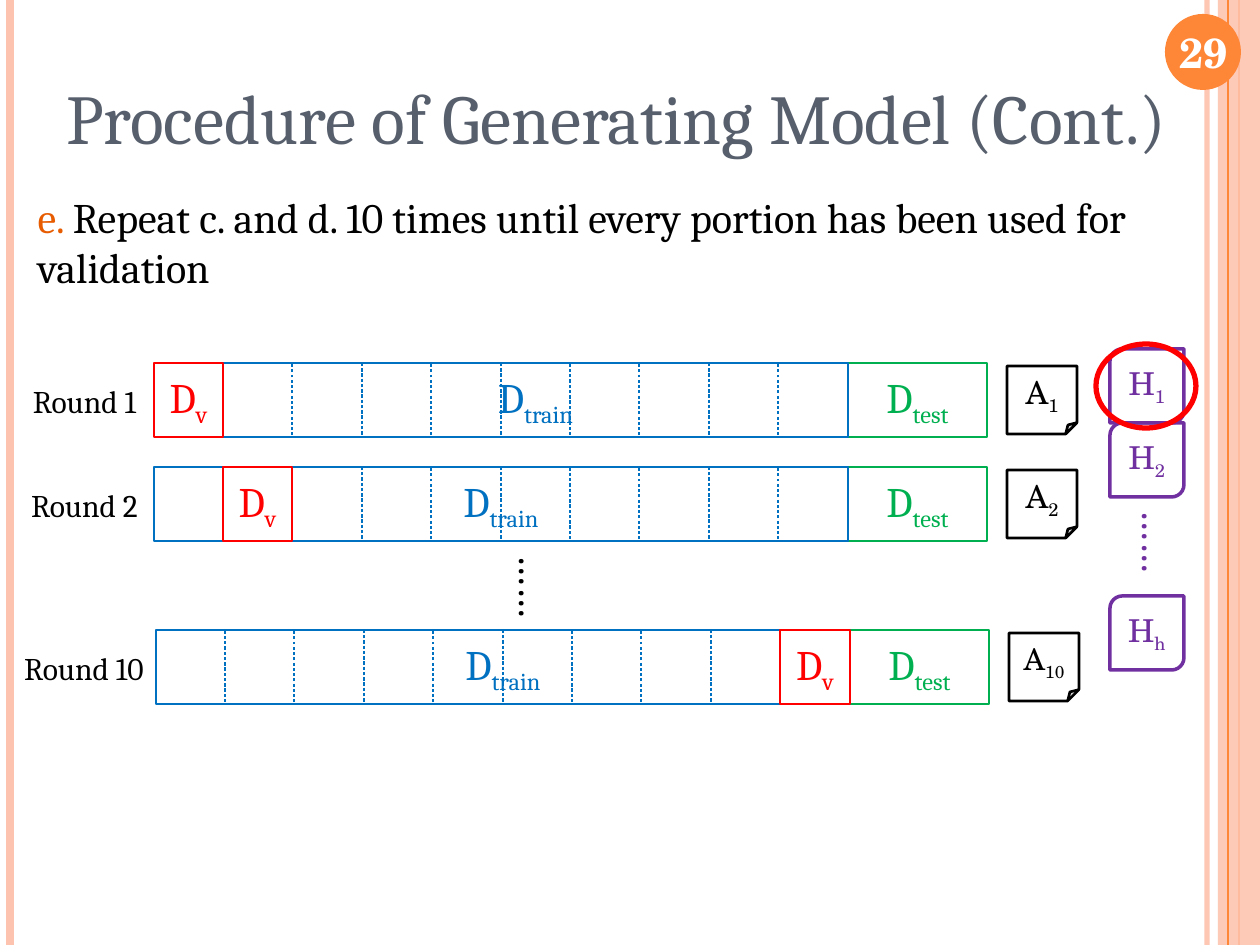
from dataclasses import dataclass

from lxml import etree
from pptx import Presentation
from pptx.dml.color import RGBColor
from pptx.enum.dml import MSO_LINE
from pptx.enum.shapes import MSO_CONNECTOR, MSO_SHAPE
from pptx.enum.text import MSO_ANCHOR, MSO_AUTO_SIZE, PP_ALIGN
from pptx.oxml.ns import qn
from pptx.util import Emu, Pt

RECT, OVAL = MSO_SHAPE.RECTANGLE, MSO_SHAPE.OVAL
NOTE, LEAF = MSO_SHAPE.FOLDED_CORNER, MSO_SHAPE.ROUND_2_DIAG_RECTANGLE
STRAIGHT, DOTS = MSO_CONNECTOR.STRAIGHT, MSO_LINE.ROUND_DOT
MID, TOP = MSO_ANCHOR.MIDDLE, MSO_ANCHOR.TOP
LEFT, CENTER = PP_ALIGN.LEFT, PP_ALIGN.CENTER
NO_FIT = MSO_AUTO_SIZE.NONE
SCALE = 914400 / 126


def px(n):
    return Emu(round(n * SCALE))


@dataclass(frozen=True)
class Theme:
    serif: str = "Cambria"
    school: str = "TeX Gyre Schola"
    slate: str = "575F6D"
    rust: str = "E75C01"
    peach: str = "FEC3AE"
    orange: str = "FE8637"
    black: str = "000000"
    white: str = "FFFFFF"
    red: str = "FF0000"
    green: str = "00B050"
    blue: str = "0070C0"
    purple: str = "7030A0"
    head: int = 40
    large: int = 24
    small: int = 18
    tight: int = 17


class Page:
    def __init__(self, slide, theme):
        self.slide, self.theme = slide, theme
        self.layer = slide.shapes

    def group(self):
        """Send the shapes that follow into a new group."""
        self.layer = self.slide.shapes.add_group_shape().shapes

    def ungroup(self):
        self.layer = self.slide.shapes

    def place(self, shape, box):
        shape.left, shape.top, shape.width, shape.height = map(px, box)

    def fade(self, shape, pct):
        """Set the opacity of the shape's colour in percent."""
        color = next(shape._element.spPr.iter(qn("a:srgbClr")))
        etree.SubElement(color, qn("a:alpha")).set("val", str(pct * 1000))

    def put(self, shape, parts, size, font, align=CENTER, anchor=MID, gap=0):
        """Fill the shape with one paragraph of (text, colour) parts."""
        frame = shape.text_frame
        frame.word_wrap, frame.auto_size = True, NO_FIT
        frame.vertical_anchor = anchor
        para = frame.paragraphs[0]
        para.alignment, para.space_before = align, Pt(gap)
        for text, color in parts:
            run = para.add_run()
            run.text = text
            run.font.size, run.font.name = Pt(size), font
            run.font.color.rgb = RGBColor.from_string(color)
        return para

    def title(self, text, box):
        shape, t = self.slide.shapes.title, self.theme
        self.place(shape, box)
        self.put(shape, [(text, t.slate)], t.head, t.serif)

    def body(self, parts, box):
        shape, t = self.slide.placeholders[1], self.theme
        self.place(shape, box)
        para = self.put(shape, parts, t.large, t.serif, LEFT, TOP, 6)
        props = para._p.get_or_add_pPr()
        props.set("marL", "0")
        props.set("indent", "0")
        etree.SubElement(props, qn("a:buNone"))

    def rule(self, x, color, width):
        line = self.layer.add_connector(STRAIGHT, px(x), 0, px(x), px(945))
        line.line.color.rgb = RGBColor.from_string(color)
        line.line.width = Pt(width)
        etree.SubElement(line._element.spPr, qn("a:effectLst"))
        return line

    def shape(self, kind, box, fill=None, line=None, width=1.5, dash=None):
        item = self.layer.add_shape(kind, *map(px, box))
        item.shadow.inherit = False
        if fill:
            item.fill.solid()
            item.fill.fore_color.rgb = RGBColor.from_string(fill)
        else:
            item.fill.background()
        if line:
            item.line.color.rgb = RGBColor.from_string(line)
            item.line.width = Pt(width)
            item.line.dash_style = dash
        else:
            item.line.fill.background()
        return item

    def label(self, text, box, size, color, font, gap=6, turn=0):
        item = self.layer.add_textbox(*map(px, box))
        item.rotation = turn
        return self.put(item, [(text, color)], size, font, gap=gap)

    def symbol(self, kind, box, base, sub, color, size, font, gap=0, **look):
        """Draw an outlined shape holding a letter with a subscript."""
        item = self.shape(kind, box, line=color, **look)
        frame = item.text_frame
        frame.margin_left = frame.margin_right = 0
        parts = [(base, color), (sub, color)]
        para = self.put(item, parts, size, font, gap=gap)
        para.runs[1].font._element.set("baseline", "-25000")

    def round(self, num, held, x, y, start=0):
        """Draw one round: ten portions, the held one used to validate."""
        t = self.theme
        edges = [x + 694 * i // 10 for i in range(11)]

        def cell(i):
            return edges[i], y, edges[i + 1] - edges[i], 74

        def data(box, sub, color):
            self.symbol(RECT, box, "D", sub, color, t.large, t.serif, 6)

        def portion(i):
            self.shape(RECT, cell(i), line=t.blue, dash=DOTS)

        self.group()
        data((edges[10], y, 139, 74), "test", t.green)
        first, *rest = [i for i in range(10) if i != held]
        portion(first)
        left = edges[start]
        data((left, y, edges[10] - left, 74), "train", t.blue)
        for i in rest:
            portion(i)
        wide = 164 if num > 9 else 139
        self.label(f"Round {num}", (84 - wide // 2, y + 8, wide, 59),
                   t.small, t.black, t.serif)
        size = t.tight if num > 9 else t.small
        self.symbol(NOTE, (x + 853, y + 3, 70, 68), "A", str(num), t.black,
                    size, t.school, fill=t.white)
        data(cell(held), "v", t.red)
        self.ungroup()


def main():
    deck = Presentation()
    deck.slide_width, deck.slide_height = px(1260), px(945)
    t = Theme()
    page = Page(deck.slides.add_slide(deck.slide_layouts[1]), t)

    page.fade(page.rule(1207, t.peach, 3), 93)
    page.rule(10, t.peach, 4.5)
    page.rule(1239, t.orange, 1.5)
    page.fade(page.shape(RECT, (1218, 0, 42, 945), t.peach), 87)
    page.rule(1228, t.orange, 0.75)
    page.shape(OVAL, (1165, 14, 76, 76), t.orange)
    page.title("Procedure of Generating Model (Cont.)", (25, 38, 1183, 158))
    number = page.label("29", (1162, 16, 84, 72), t.large, t.white,
                        t.school, gap=0)
    number.runs[0].font.bold = True
    page.body([("e. ", t.rust),
               ("Repeat c. and d. 10 times until every portion has been "
                "used for validation", t.black)], (25, 185, 1221, 149))

    for sub, y in (("2", 423), ("h", 596), ("1", 349)):
        page.symbol(LEAF, (1110, y, 74, 74), "H", sub, t.purple, t.small,
                    t.school, fill=t.white, width=2)
    page.label("……", (1104, 512, 110, 59), t.large, t.purple, t.serif, turn=90)
    page.shape(OVAL, (1096, 344, 100, 84), line=t.red, width=3)

    page.round(1, 0, 154, 363, start=1)
    page.round(2, 1, 154, 467)
    page.label("……", (481, 557, 110, 59), t.large, t.black, t.serif, turn=90)
    page.round(10, 9, 156, 630)
    deck.save("out.pptx")


if __name__ == "__main__":
    main()
